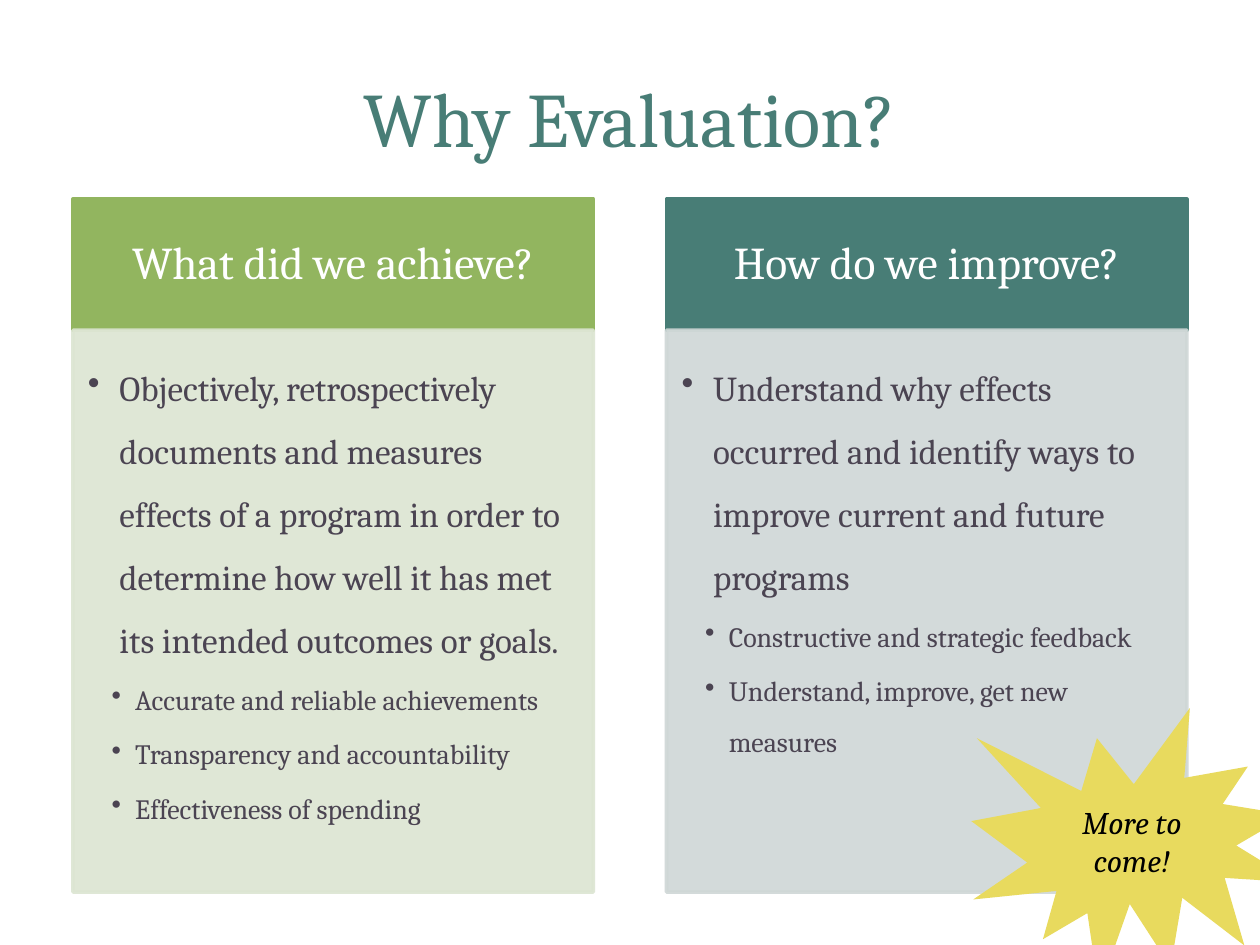
from lxml import etree
from pptx import Presentation
from pptx.dml.color import RGBColor
from pptx.enum.shapes import MSO_SHAPE
from pptx.enum.text import MSO_ANCHOR, PP_ALIGN
from pptx.oxml.ns import qn
from pptx.util import Pt

RECTANGLE, STAR = MSO_SHAPE.RECTANGLE, MSO_SHAPE.EXPLOSION1
TOP, MIDDLE = MSO_ANCHOR.TOP, MSO_ANCHOR.MIDDLE
LEFT, CENTER = PP_ALIGN.LEFT, PP_ALIGN.CENTER

FONT = "Cambria"
TEAL, WHITE, BLACK, TEXT, YELLOW = "487D76", "FFFFFF", "000000", "4B4452", "E8DA5E"
TITLE = "Why Evaluation?"
CALLOUT = "More to come!"
COLUMNS = [
    {
        "heading": "What did we achieve?", "color": "92B55F", "tint": "DCE5D2",
        "point": "Objectively, retrospectively documents and measures effects of a program "
                 "in order to determine how well it has met its intended outcomes or goals.",
        "details": ["Accurate and reliable achievements",
                    "Transparency and accountability",
                    "Effectiveness of spending"],
    },
    {
        "heading": "How do we improve?", "color": TEAL, "tint": "CFD7D6",
        "point": "Understand why effects occurred and identify ways to improve "
                 "current and future programs",
        "details": ["Constructive and strategic feedback",
                    "Understand, improve, get new measures"],
    },
]

SLIDE_WIDTH, SLIDE_HEIGHT = 720, 540
COLUMN_LEFT, COLUMN_TOP, COLUMN_WIDTH = 41.7, 113.8, 297.4
COLUMN_STEP = SLIDE_WIDTH - 2 * COLUMN_LEFT - COLUMN_WIDTH
HEADING_HEIGHT, BODY_HEIGHT = 74.9, 321.1
# Per bullet level: font size, left margin, hanging indent, space after
LEVELS = [(20, 18, 18, 3), (16, 27, 13.5, 2.4)]


def rgb(value):
    return RGBColor.from_string(value)


def set_font(paragraph, size, color, italic=False):
    font = paragraph.font
    font.name, font.size, font.italic = FONT, Pt(size), italic
    font.color.rgb = rgb(color)


def set_frame(shape, anchor, insets=(7.2, 3.6, 7.2, 3.6)):
    frame = shape.text_frame
    frame.word_wrap = True
    frame.vertical_anchor = anchor
    (frame.margin_left, frame.margin_top,
     frame.margin_right, frame.margin_bottom) = map(Pt, insets)
    return frame


def write_centered(frame, text, size, color, italic=False):
    paragraph = frame.paragraphs[0]
    paragraph.text = text
    paragraph.alignment = CENTER
    set_font(paragraph, size, color, italic)
    return paragraph


def add_filled(slide, kind, box, color, line_width=0, opacity=100):
    shape = slide.shapes.add_shape(kind, *map(Pt, box))
    shape.shadow.inherit = False
    shape.fill.solid()
    shape.fill.fore_color.rgb = rgb(color)
    if line_width:
        shape.line.width = Pt(line_width)
        shape.line.color.rgb = rgb(color)
    else:
        shape.line.fill.background()
    if opacity < 100:
        for element in shape._element.spPr.iter(qn("a:srgbClr")):
            etree.SubElement(element, qn("a:alpha"), val=str(opacity * 1000))
    return shape


def add_bullet(paragraph, text, level):
    size, margin, hanging, space_after = LEVELS[level]
    paragraph.text = text
    paragraph.level = level
    paragraph.alignment = LEFT
    paragraph.line_spacing = 1.5
    paragraph.space_after = Pt(space_after)
    set_font(paragraph, size, TEXT)
    properties = paragraph._p.get_or_add_pPr()
    properties.set("marL", str(Pt(margin)))
    properties.set("indent", str(-Pt(hanging)))
    bullet = etree.Element(qn("a:buChar"), char="•")
    properties.find(qn("a:defRPr")).addprevious(bullet)


def add_column(slide, column, left):
    heading = add_filled(slide, RECTANGLE, (left, COLUMN_TOP, COLUMN_WIDTH, HEADING_HEIGHT),
                         column["color"], line_width=2)
    frame = set_frame(heading, MIDDLE, (14.4, 8.6, 14.4, 8.6))
    write_centered(frame, column["heading"], 26, WHITE).line_spacing = 0.9

    body = add_filled(slide, RECTANGLE,
                      (left, COLUMN_TOP + HEADING_HEIGHT, COLUMN_WIDTH, BODY_HEIGHT),
                      column["tint"], line_width=2, opacity=90)
    frame = set_frame(body, TOP, (8.6, 8.6, 11.5, 12.2))
    add_bullet(frame.paragraphs[0], column["point"], 0)
    for detail in column["details"]:
        add_bullet(frame.add_paragraph(), detail, 1)


def main():
    presentation = Presentation()
    presentation.slide_width, presentation.slide_height = Pt(SLIDE_WIDTH), Pt(SLIDE_HEIGHT)
    slide = presentation.slides.add_slide(presentation.slide_layouts[6])

    title = slide.shapes.add_textbox(Pt(36), Pt(21.6), Pt(648), Pt(90))
    write_centered(set_frame(title, MIDDLE), TITLE, 44, TEAL)

    for index, column in enumerate(COLUMNS):
        add_column(slide, column, COLUMN_LEFT + index * COLUMN_STEP)

    star = add_filled(slide, STAR, (555, 404.6, 185.8, 162), YELLOW)
    write_centered(set_frame(star, MIDDLE), CALLOUT, 18, BLACK, italic=True)

    presentation.save("out.pptx")


if __name__ == "__main__":
    main()
